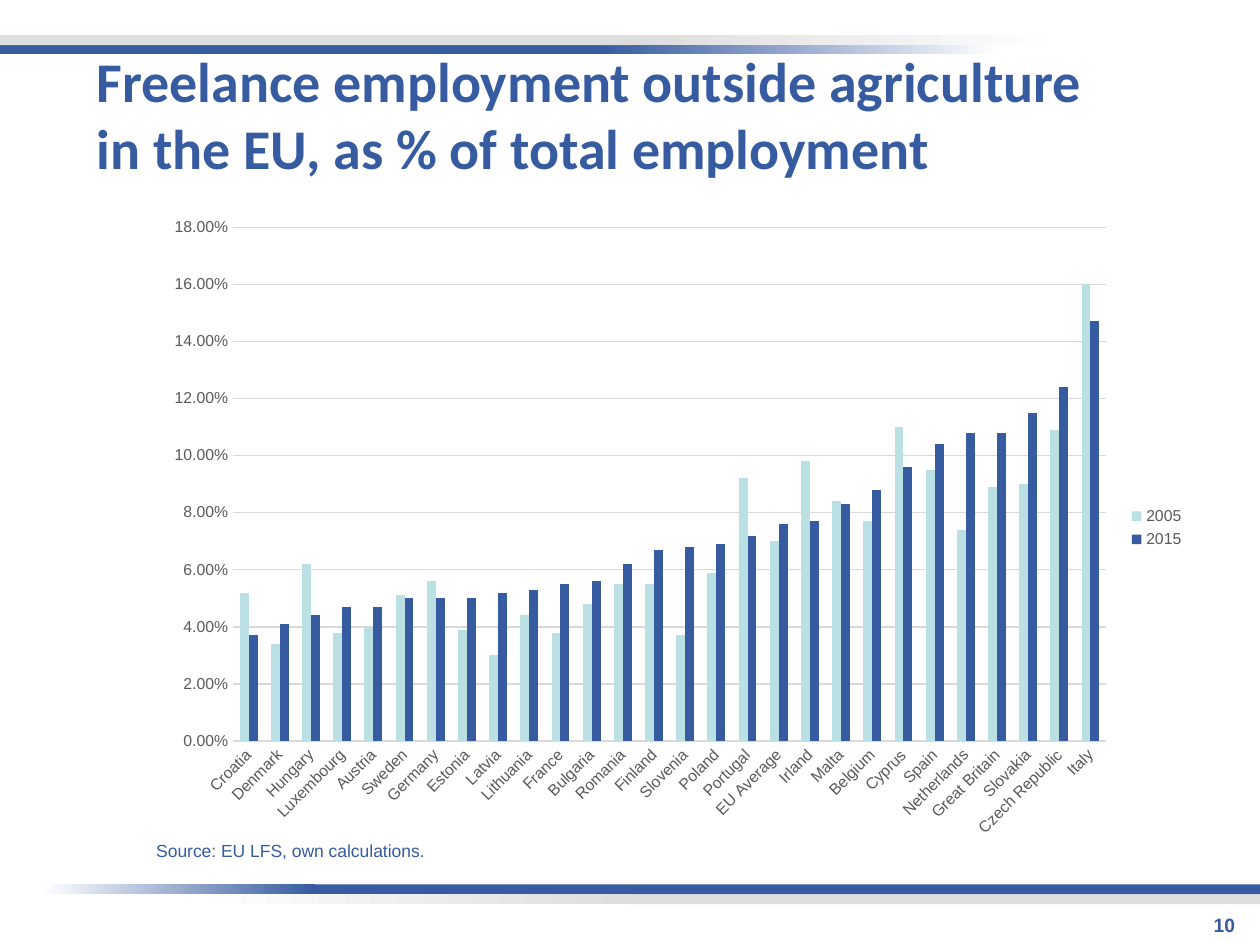
from lxml import etree
from pptx import Presentation
from pptx.chart.data import CategoryChartData
from pptx.dml.color import RGBColor
from pptx.enum.chart import XL_CHART_TYPE as ChartType, XL_LEGEND_POSITION as LegendPos
from pptx.enum.chart import XL_TICK_MARK as Tick
from pptx.enum.shapes import MSO_SHAPE as Shape
from pptx.enum.text import MSO_ANCHOR as Anchor, PP_ALIGN as Align
from pptx.oxml.ns import qn
from pptx.util import Cm, Pt

COLORS = {"blue": "365BA0", "grey": "DDDDDD", "white": "FFFFFF", "teal": "BBE0E3",
          "label": "595959", "grid": "D9D9D9"}

SHARES = [
    ("Croatia", 0.052, 0.037), ("Denmark", 0.034, 0.041), ("Hungary", 0.062, 0.044),
    ("Luxembourg", 0.038, 0.047), ("Austria", 0.04, 0.047), ("Sweden", 0.051, 0.05),
    ("Germany", 0.056, 0.05), ("Estonia", 0.039, 0.05), ("Latvia", 0.03, 0.052),
    ("Lithuania", 0.044, 0.053), ("France", 0.038, 0.055), ("Bulgaria", 0.048, 0.056),
    ("Romania", 0.055, 0.062), ("Finland", 0.055, 0.067), ("Slovenia", 0.037, 0.068),
    ("Poland", 0.059, 0.069), ("Portugal", 0.092, 0.072), ("EU Average", 0.07, 0.076),
    ("Irland", 0.098, 0.077), ("Malta", 0.084, 0.083), ("Belgium", 0.077, 0.088),
    ("Cyprus", 0.11, 0.096), ("Spain", 0.095, 0.104), ("Netherlands", 0.074, 0.108),
    ("Great Britain", 0.089, 0.108), ("Slovakia", 0.09, 0.115),
    ("Czech Republic", 0.109, 0.124), ("Italy", 0.16, 0.147),
]


def rgb(name):
    """Return the named colour."""
    return RGBColor.from_string(COLORS[name])


def add_bar(s, box, start, end=None):
    """Add a borderless bar, solid or fading from start to end."""
    sp = s.shapes.add_shape(Shape.RECTANGLE, *map(Cm, box))
    sp.shadow.inherit = False
    sp.line.fill.background()
    if end is None:
        sp.fill.solid()
        sp.fill.fore_color.rgb = rgb(start)
        return
    sp.fill.gradient()
    sp.fill.gradient_angle = 0
    for stop, color in zip(sp.fill.gradient_stops, (start, end)):
        stop.color.rgb = rgb(color)


def add_top_band(s, left, top, height):
    """Add the header band, which fades out to the right."""
    for color, dy, solid, fade in (("blue", 0.18, 12.06, 8.1), ("grey", 0, 12.7, 8.89)):
        add_bar(s, (left, top + dy, solid, height), color)
        add_bar(s, (left + solid, top + dy, fade, height), color, "white")


def add_bottom_band(s, right, top, height):
    """Add the footer band, which fades out to the left."""
    for color, dy, solid, fade in (("blue", 0, 19.05, 5.51), ("grey", 0.2, 12.7, 8.89)):
        add_bar(s, (right - solid, top + dy, solid, height), color)
        add_bar(s, (right - solid - fade, top + dy, fade, height), "white", color)


def add_text(s, box, text, size, font="Arial", bold=False, align=Align.LEFT, anchor=Anchor.TOP):
    """Add a wrapped blue text box."""
    tf = s.shapes.add_textbox(*map(Cm, box)).text_frame
    tf.word_wrap = True
    tf.vertical_anchor = anchor
    p = tf.paragraphs[0]
    p.alignment = align
    r = p.add_run()
    r.text = text
    r.font.name, r.font.size, r.font.bold = font, Pt(size), bold
    r.font.color.rgb = rgb("blue")


def set_font(font, size):
    """Apply the chart label font."""
    font.name, font.size, font.bold = "Arial", Pt(size), False
    font.color.rgb = rgb("label")


def set_plot_layout(chart, **area):
    """Fix the inner plot area as fractions of the chart."""
    plot_area = chart._chartSpace.chart.plotArea
    for old in plot_area.findall(qn("c:layout")):
        plot_area.remove(old)
    layout = etree.Element(qn("c:layout"))
    manual = etree.SubElement(layout, qn("c:manualLayout"))
    settings = {"layoutTarget": "inner", "xMode": "edge", "yMode": "edge", **area}
    for tag, value in settings.items():
        etree.SubElement(manual, qn(f"c:{tag}")).set("val", str(value))
    plot_area.insert(0, layout)


def add_share_chart(s, box):
    """Add the clustered columns of freelance shares by country."""
    countries, shares_2005, shares_2015 = zip(*SHARES)
    data = CategoryChartData(number_format="0.00%")
    data.categories = countries
    data.add_series("2005", shares_2005)
    data.add_series("2015", shares_2015)
    chart = s.shapes.add_chart(ChartType.COLUMN_CLUSTERED, *map(Cm, box), data).chart
    set_font(chart.font, 10)
    chart.has_title = False
    set_plot_layout(chart, x=0.076, y=0.034, w=0.837, h=0.797)

    plot = chart.plots[0]
    plot.vary_by_categories = False
    plot.gap_width, plot.overlap = 150, 0
    for series, color in zip(plot.series, ("teal", "blue")):
        series.format.fill.solid()
        series.format.fill.fore_color.rgb = rgb(color)

    cat, val = chart.category_axis, chart.value_axis
    for axis in (cat, val):
        axis.major_tick_mark = axis.minor_tick_mark = Tick.NONE
        set_font(axis.tick_labels.font, 9)
    val.minimum_scale, val.maximum_scale, val.major_unit = 0, 0.18, 0.02
    val.tick_labels.number_format = "0.00%"
    val.tick_labels.number_format_is_linked = False
    val.format.line.fill.background()
    val.has_major_gridlines = True
    for line in (cat.format.line, val.major_gridlines.format.line):
        line.color.rgb = rgb("grid")
        line.width = Pt(0.75)
    cat._element.find(qn("c:txPr")).find(qn("a:bodyPr")).set("rot", "-2700000")

    chart.has_legend = True
    chart.legend.position = LegendPos.RIGHT
    chart.legend.include_in_layout = False
    set_font(chart.legend.font, 9)


def main():
    """Build and save the slide."""
    prs = Presentation()
    prs.slide_width, prs.slide_height = Cm(25.4), Cm(19.05)
    s = prs.slides.add_slide(prs.slide_layouts[6])
    add_top_band(s, 0, 0.71, 0.2)
    add_bottom_band(s, 25.4, 17.83, 0.2)
    add_text(s, (1.7, 1.07, 21.23, 2.44),
             "Freelance employment outside agriculture in the EU, as % of total employment",
             32, "Calibri", True, anchor=Anchor.MIDDLE)
    add_text(s, (19.23, 18.29, 5.92, 0.7), "10", 11, bold=True, align=Align.RIGHT)
    add_share_chart(s, (3.1, 4.14, 21.03, 13))
    add_text(s, (2.9, 16.81, 13.41, 0.69), "Source: EU LFS, own calculations.", 10)
    prs.save("out.pptx")


if __name__ == "__main__":
    main()
